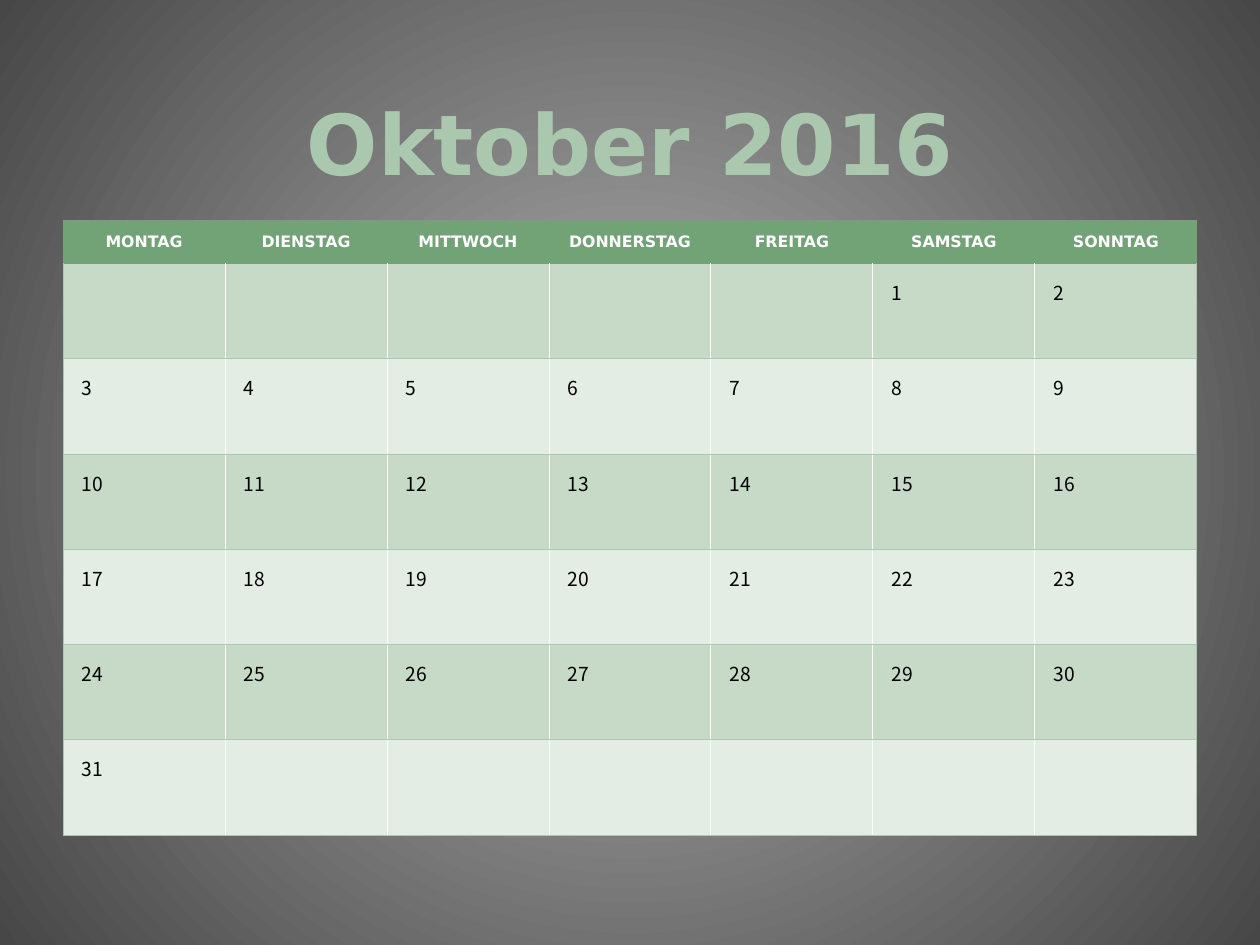
from dataclasses import dataclass

from lxml import etree
from pptx import Presentation
from pptx.dml.color import RGBColor
from pptx.enum.text import MSO_ANCHOR, PP_ALIGN
from pptx.oxml.ns import qn
from pptx.util import Inches, Pt

CENTER = PP_ALIGN.CENTER
MIDDLE, BOTTOM = MSO_ANCHOR.MIDDLE, MSO_ANCHOR.BOTTOM

COLORS = {
    "glow": "B1B1B1", "dusk": "474747",
    "title": "AAC8AD", "head": "72A376", "line": "AAC8AD",
    "odd": "C7DAC8", "even": "E3EDE4",
    "white": "FFFFFF", "black": "000000",
}
HEAD_FONT, DAY_FONT = "DejaVu Sans", "Noto Sans CJK SC"

NAMES = ["MONTAG", "DIENSTAG", "MITTWOCH", "DONNERSTAG",
         "FREITAG", "SAMSTAG", "SONNTAG"]
COLS, WEEKS = len(NAMES), 6
FIRST, LAST = 5, 31  # column of day 1, number of days
LEFT, TOP, WIDTH, HEIGHT, HEAD = 0.5, 1.75, 9, 4.88, 0.34


@dataclass
class Slot:
    row: int
    col: int
    text: str

    @property
    def fill(self) -> str:
        if self.row == 0:
            return "head"
        return "odd" if self.row % 2 else "even"

    def edges(self) -> dict[str, str | None]:
        """Border colour names; None means no line."""
        outer, inner = ("line", "white") if self.row else ("head", None)
        return {
            "lnL": outer if self.col == 0 else inner,
            "lnR": outer if self.col == COLS - 1 else inner,
            "lnT": "line" if self.row > 1 else "head",
            "lnB": "line" if self.row else "head",
        }


def rgb(name: str) -> RGBColor:
    return RGBColor.from_string(COLORS[name])


def write(frame, text: str, *, size: float, font: str, color: str,
          bold: bool = False, align=None, space: float | None = None,
          indent: float = 0) -> None:
    para = frame.paragraphs[0]
    para.alignment = align
    para.line_spacing = space
    if indent:
        para._p.get_or_add_pPr().set("marL", str(Inches(indent)))
    run = para.add_run()
    run.text = text
    run.font.size = Pt(size)
    run.font.name = font
    run.font.bold = bold
    run.font.color.rgb = rgb(color)


def border(cell, edges: dict[str, str | None]) -> None:
    props = cell._tc.get_or_add_tcPr()
    for tag, name in edges.items():
        line = etree.SubElement(props, qn(f"a:{tag}"), w=str(Pt(0.5)))
        if name is None:
            etree.SubElement(line, qn("a:noFill"))
        else:
            solid = etree.SubElement(line, qn("a:solidFill"))
            etree.SubElement(solid, qn("a:srgbClr"), val=COLORS[name])


def draw_slot(table, slot: Slot) -> None:
    cell = table.cell(slot.row, slot.col)
    border(cell, slot.edges())
    cell.fill.solid()
    cell.fill.fore_color.rgb = rgb(slot.fill)
    if slot.row == 0:
        cell.vertical_anchor = MIDDLE
        write(cell.text_frame, slot.text, size=9, font=HEAD_FONT,
              color="white", bold=True, align=CENTER)
    elif slot.text:
        write(cell.text_frame, slot.text, size=11, font=DAY_FONT,
              color="black", space=1.3, indent=0.05)


def draw_ground(slide) -> None:
    fill = slide.background.fill
    fill.gradient()
    for stop, name, place in zip(fill.gradient_stops, ("glow", "dusk"), (0, 1)):
        stop.color.rgb = rgb(name)
        stop.position = place
    # Turn the linear gradient into a circular one around the middle
    grad = slide.element.find(".//" + qn("a:gradFill"))
    grad.remove(grad.find(qn("a:lin")))
    ring = etree.SubElement(grad, qn("a:path"), path="circle")
    etree.SubElement(ring, qn("a:fillToRect"),
                     {side: "50000" for side in "ltrb"})


def draw_title(slide) -> None:
    title = slide.shapes.title
    title.left, title.top = Inches(0.5), Inches(0.33)
    title.width, title.height = Inches(9), Inches(1.25)
    title.text_frame.vertical_anchor = BOTTOM
    write(title.text_frame, "Oktober 2016", size=48, font=HEAD_FONT,
          color="title", bold=True, align=CENTER)


def draw_month(slide) -> None:
    table = slide.shapes.add_table(
        WEEKS + 1, COLS, Inches(LEFT), Inches(TOP),
        Inches(WIDTH), Inches(HEIGHT)).table
    table.horz_banding = False
    for col in table.columns:
        col.width = Inches(WIDTH / COLS)
    for i, row in enumerate(table.rows):
        row.height = Inches((HEIGHT - HEAD) / WEEKS if i else HEAD)

    # Weekday names, then the days in reading order
    slots = [Slot(0, col, name) for col, name in enumerate(NAMES)]
    for i in range(WEEKS * COLS):
        day = i - FIRST + 1
        text = str(day) if 1 <= day <= LAST else ""
        slots.append(Slot(i // COLS + 1, i % COLS, text))
    for slot in slots:
        draw_slot(table, slot)


def main() -> None:
    deck = Presentation()
    deck.slide_width, deck.slide_height = Inches(10), Inches(7.5)
    slide = deck.slides.add_slide(deck.slide_layouts[5])
    draw_ground(slide)
    draw_title(slide)
    draw_month(slide)
    deck.save("out.pptx")


if __name__ == "__main__":
    main()
